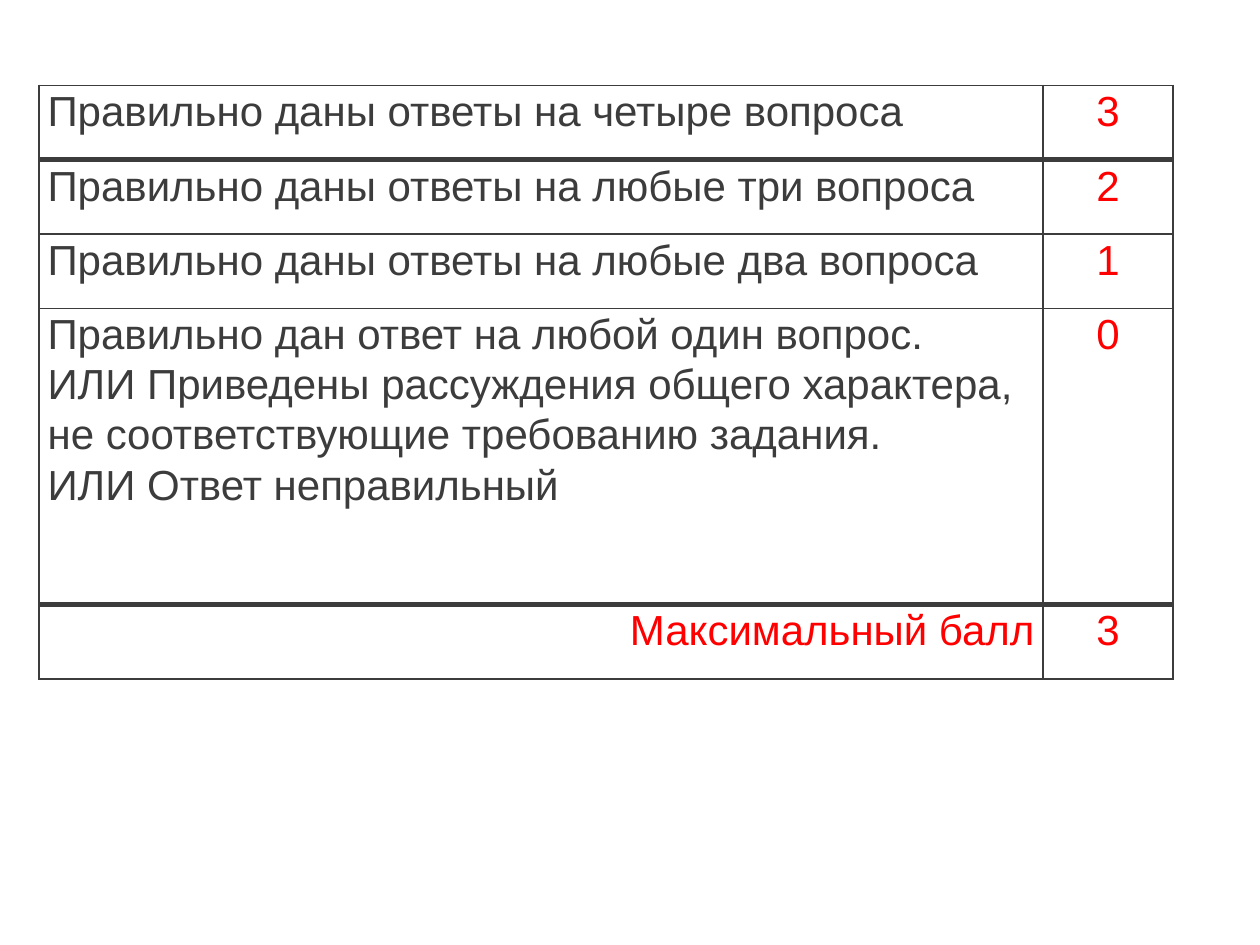
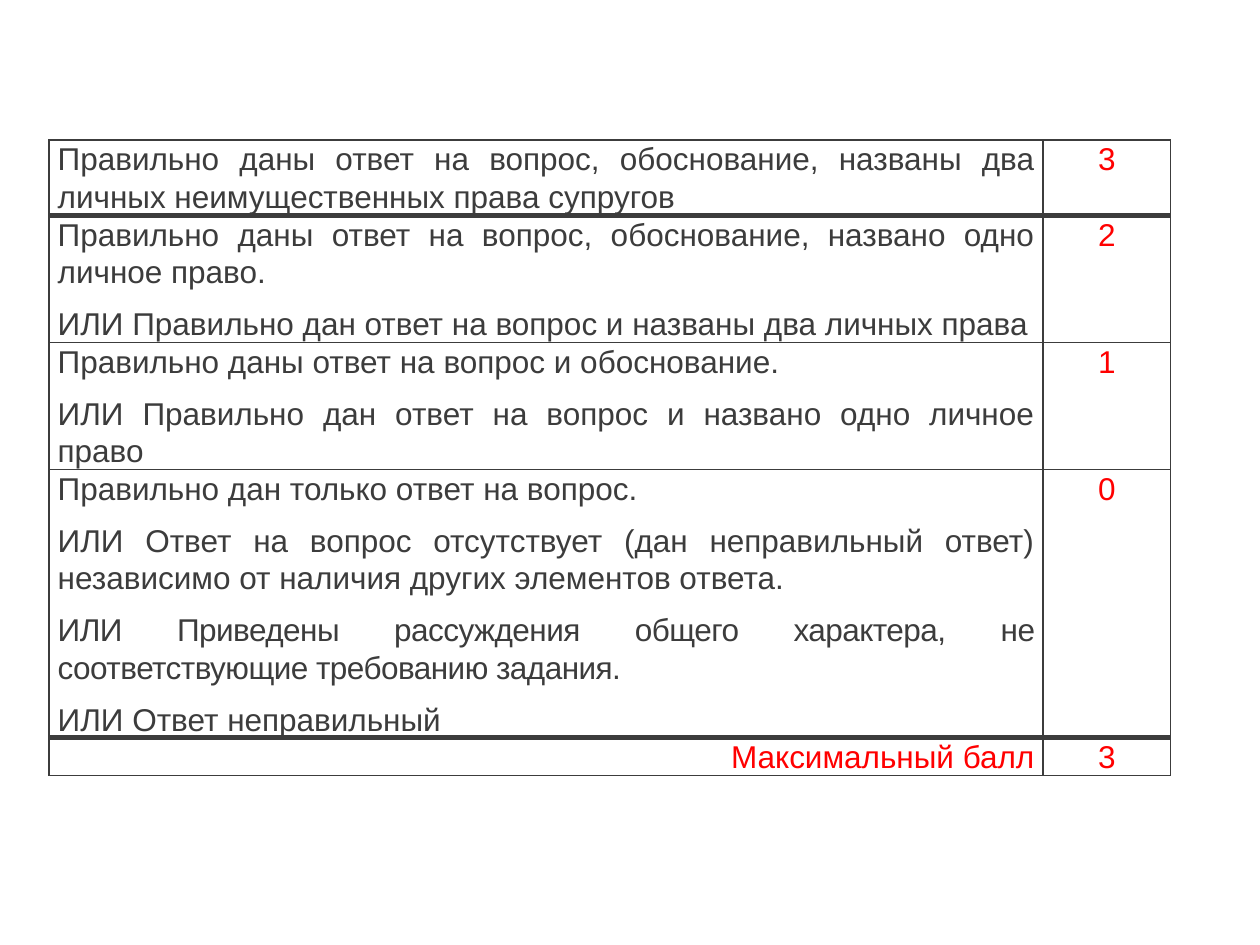
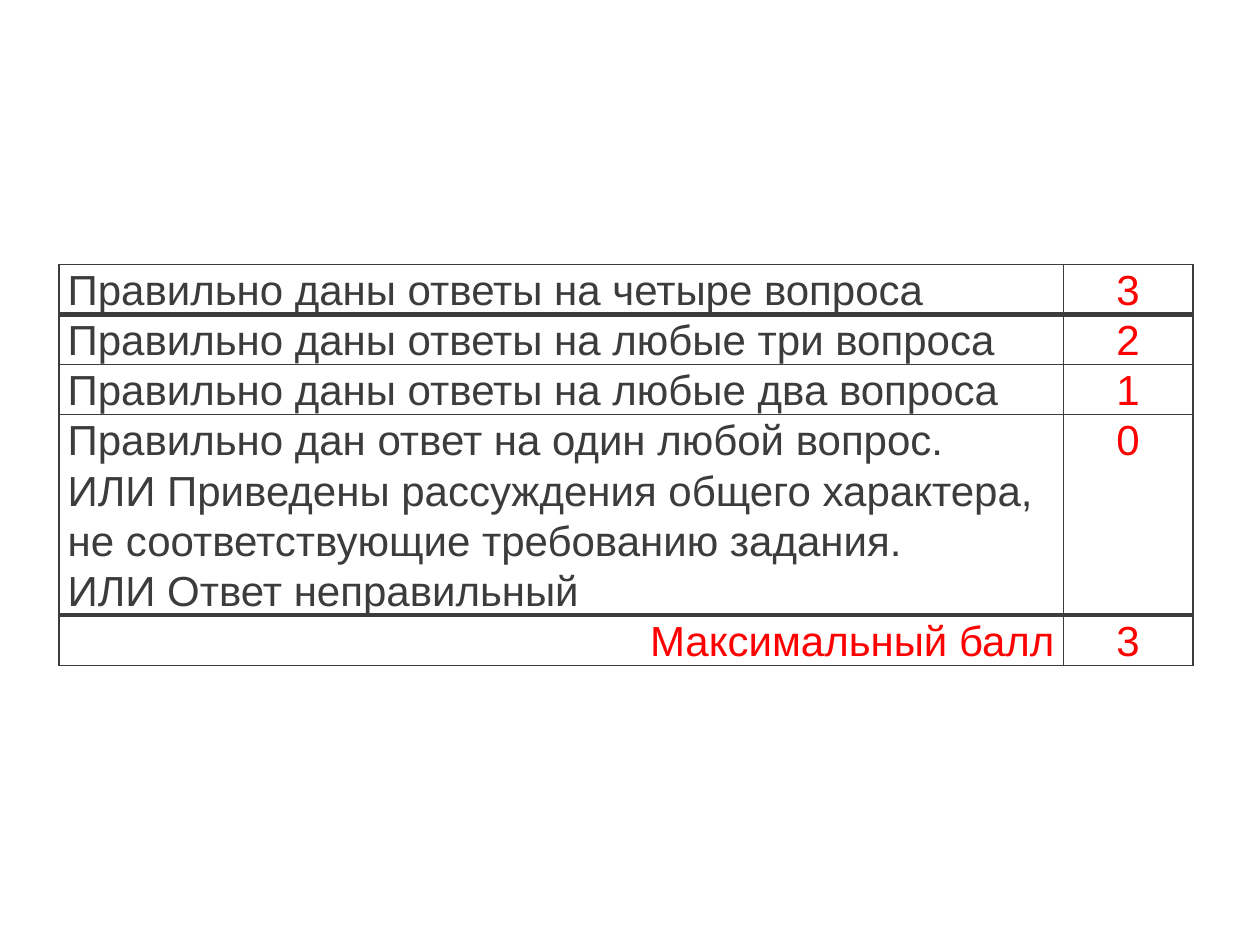
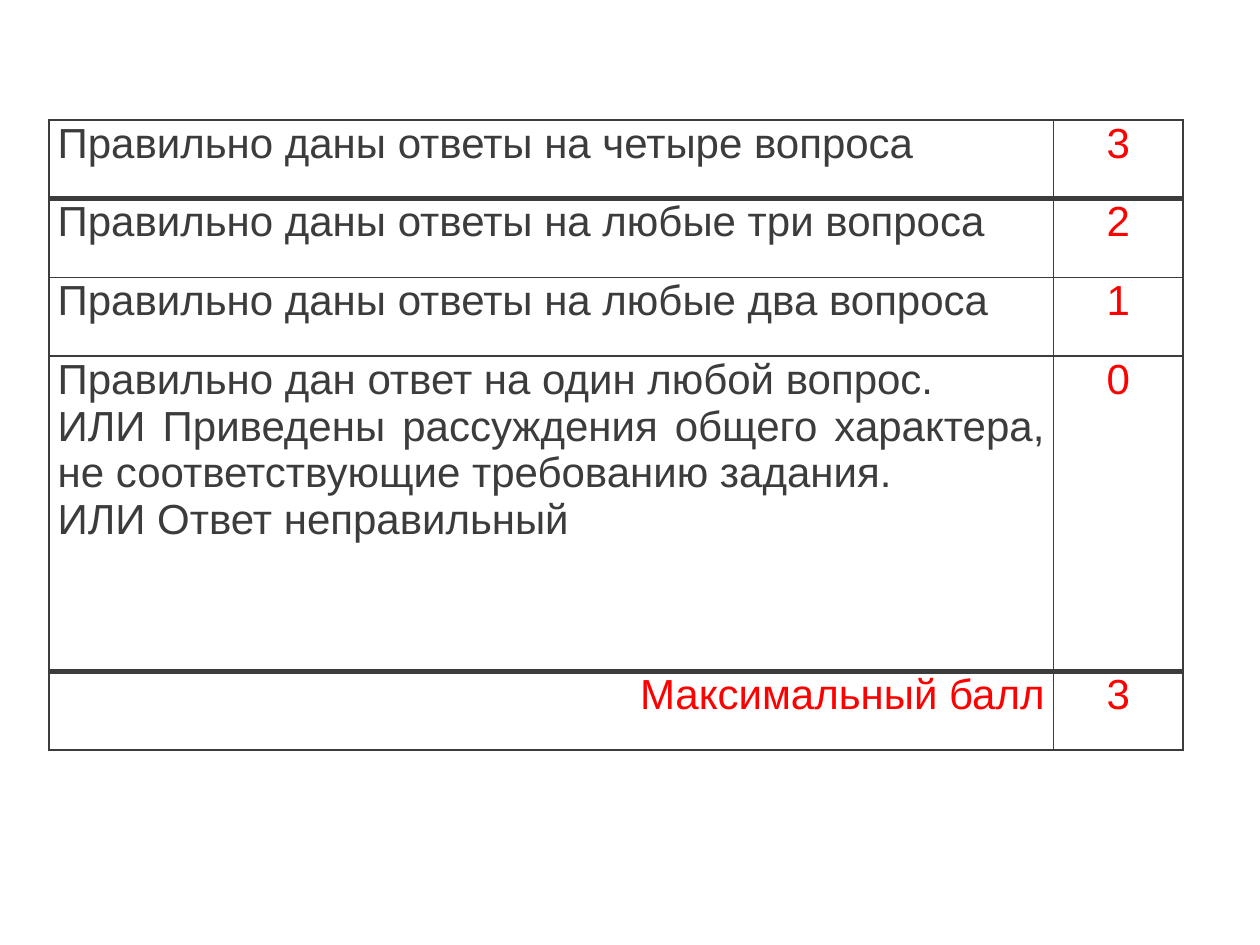
"""Build four slides of scoring criteria tables."""
from lxml import etree
from pptx import Presentation
from pptx.dml.color import RGBColor
from pptx.enum.text import PP_ALIGN
from pptx.oxml.ns import qn
from pptx.util import Pt

LEFT, CENTER, RIGHT, JUSTIFY = PP_ALIGN.LEFT, PP_ALIGN.CENTER, PP_ALIGN.RIGHT, PP_ALIGN.JUSTIFY
COLORS = {"ink": "3C3C3C", "score": "FF0000", "paper": "FFFFFF"}
FONT = "Arial"
BLANK_LAYOUT = 6
SIDE_INSET = 4.9
THIN, THICK = 1, 3
SCORES = ["3", "2", "1", "0", "3"]
MAXIMUM = "Максимальный балл"
GENERAL_REASONING = "ИЛИ Приведены рассуждения общего характера, не соответствующие требованию задания."
WRONG_ANSWER = "ИЛИ Ответ неправильный"


def draw_borders(cell, top, bottom):
    properties = cell._tc.get_or_add_tcPr()
    for side, width in (("L", THIN), ("R", THIN), ("T", top), ("B", bottom)):
        line = etree.SubElement(properties, qn(f"a:ln{side}"), w=str(Pt(width)))
        paint = etree.SubElement(line, qn("a:solidFill"))
        etree.SubElement(paint, qn("a:srgbClr"), val=COLORS["ink"])


def write_cell(cell, lines, color, align, style):
    cell.margin_left = cell.margin_right = Pt(SIDE_INSET)
    cell.margin_top = cell.margin_bottom = 0
    frame = cell.text_frame
    frame.text = "\n".join(lines)
    for paragraph in frame.paragraphs:
        paragraph.alignment = align
        paragraph.font.name = FONT
        paragraph.font.size = Pt(style["size"])
        paragraph.font.color.rgb = RGBColor.from_string(COLORS[color])
        paragraph.line_spacing = style["spacing"]
        paragraph.space_after = Pt(style["after"])
        if style["tight"] == paragraph.text:
            paragraph.runs[0]._r.get_or_add_rPr().set("spc", "-30")


four_questions = [
    ["Правильно даны ответы на четыре вопроса"],
    ["Правильно даны ответы на любые три вопроса"],
    ["Правильно даны ответы на любые два вопроса"],
]
any_one = ["Правильно дан ответ на один любой вопрос.", GENERAL_REASONING, WRONG_ANSWER]
one_any = ["Правильно дан ответ на любой один вопрос.", GENERAL_REASONING, WRONG_ANSWER]
spouses_rights = [
    ["Правильно даны ответ на вопрос, обоснование, названы два личных неимущественных права супругов"],
    ["Правильно даны ответ на вопрос, обоснование, названо одно личное право.",
     "ИЛИ Правильно дан ответ на вопрос и названы два личных права"],
    ["Правильно даны ответ на вопрос и обоснование.",
     "ИЛИ Правильно дан ответ на вопрос и названо одно личное право"],
    ["Правильно дан только ответ на вопрос.",
     "ИЛИ Ответ на вопрос отсутствует (дан неправильный ответ) "
     "независимо от наличия других элементов ответа.",
     GENERAL_REASONING, WRONG_ANSWER],
]

wide, narrow = (573.8, 74.2), (568, 72.8)
large = {"size": 24, "spacing": 1.07, "after": 0, "align": LEFT, "tight": None}
dense = {"size": 18, "spacing": 1.07, "after": 8, "align": JUSTIFY, "tight": GENERAL_REASONING}
single = {**large, "spacing": 1.0, "align": JUSTIFY}

rubrics = [
    (four_questions + [one_any], (22.3, 48.8), 340, wide, (42.5, 169.2), large),
    (spouses_rights, (28.1, 79.9), 378, narrow, (13.7, 13.7), dense),
    (four_questions + [any_one], (33.8, 151), 235.4, wide, (28.1, 111.6), large),
    (four_questions + [any_one], (28.1, 68.6), 360, wide, (45, 180), single),
]

prs = Presentation()
prs.slide_width, prs.slide_height = Pt(720), Pt(540)
background = prs.slide_master.background.fill
background.solid()
background.fore_color.rgb = RGBColor.from_string(COLORS["paper"])

for criteria, (left, top), height, widths, (row_height, zero_height), style in rubrics:
    slide = prs.slides.add_slide(prs.slide_layouts[BLANK_LAYOUT])
    rubric = slide.shapes.add_table(len(SCORES), 2, Pt(left), Pt(top), Pt(sum(widths)), Pt(height))
    grid = rubric.table
    grid.first_row = grid.horz_banding = False
    for column, width in zip(grid.columns, widths):
        column.width = Pt(width)
    last = len(SCORES) - 1
    for index, (lines, score) in enumerate(zip(criteria + [[MAXIMUM]], SCORES)):
        grid.rows[index].height = Pt(zero_height if score == "0" else row_height)
        criterion, points = grid.cell(index, 0), grid.cell(index, 1)
        if index == last:
            write_cell(criterion, lines, "score", RIGHT, style)
        else:
            write_cell(criterion, lines, "ink", style["align"], style)
        write_cell(points, [score], "score", CENTER, style)
        for cell in (criterion, points):
            draw_borders(cell, THICK if index in (1, last) else THIN,
                         THICK if index in (0, last - 1) else THIN)
            cell.fill.background()
    rubric.height = Pt(height)

prs.save("out.pptx")
